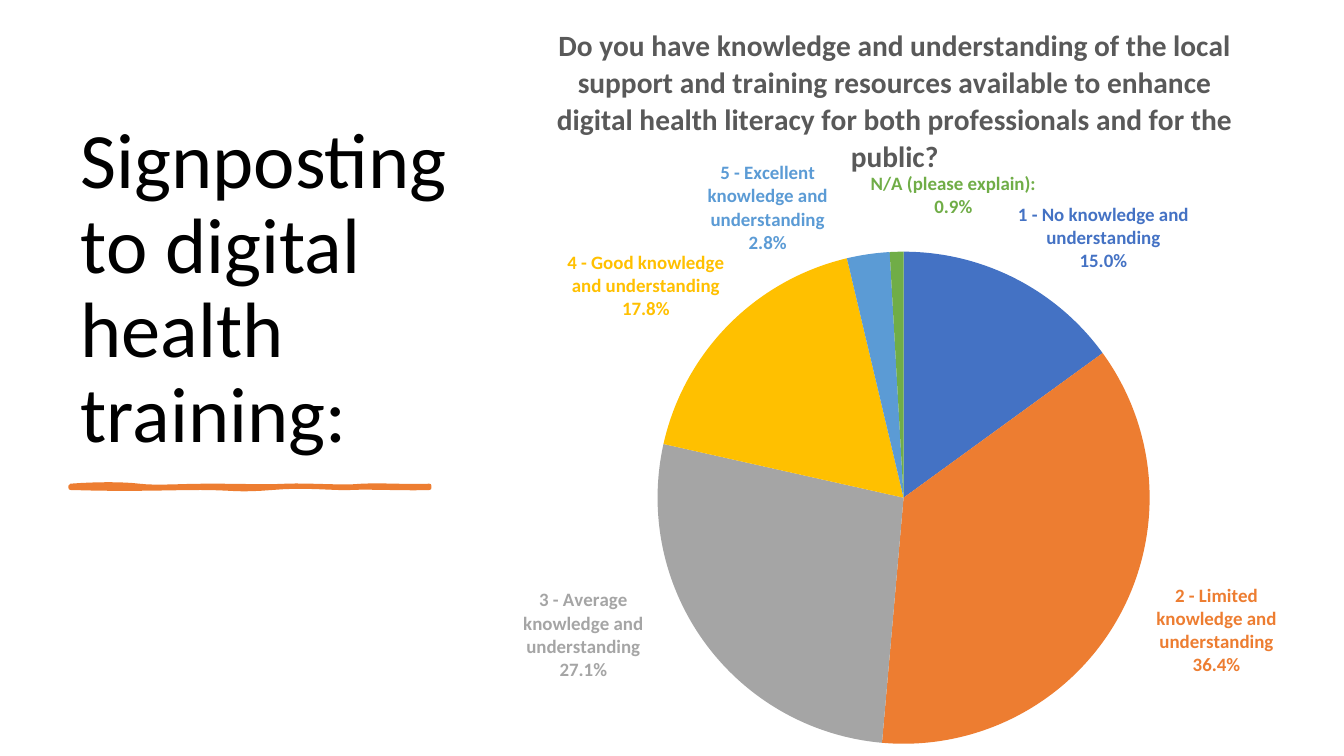
from lxml import etree
from pptx import Presentation
from pptx.chart.data import CategoryChartData
from pptx.dml.color import RGBColor
from pptx.enum.chart import XL_CHART_TYPE, XL_LABEL_POSITION
from pptx.enum.text import MSO_ANCHOR, MSO_AUTO_SIZE, PP_ALIGN
from pptx.oxml.ns import qn
from pptx.util import Pt

PIE = XL_CHART_TYPE.PIE
OUTSIDE_END = XL_LABEL_POSITION.OUTSIDE_END
ORANGE = "ED7D31"
QUESTION = ("Do you have knowledge and understanding of the local support and "
            "training resources available to enhance digital health literacy "
            "for both professionals and for the public?")

# Answer, share, colour, label shift as a fraction of the chart
ANSWERS = [
    ("1 - No knowledge and understanding", 0.15, "4472C4", None),
    ("2 - Limited knowledge and understanding", 0.364, ORANGE, (0.039, -0.049)),
    ("3 - Average knowledge and understanding", 0.271, "A5A5A5", (-0.066, -0.076)),
    ("4 - Good knowledge and understanding", 0.178, "FFC000", None),
    ("5 - Excellent knowledge and understanding", 0.028, "5B9BD5", (-0.046, 0.008)),
    ("N/A (please explain):", 0.009, "70AD47", (0.066, -0.036)),
]

# Underline: start point, then two control points and an end point per curve
UNDERLINE_START = (50.4, 347)
UNDERLINE_CURVES = [
    ((69.8, 345.6), (87.1, 345.6), (99.4, 347)),
    ((111.6, 348.5), (127.4, 347), (150.5, 347)),
    ((173.5, 347), (187.2, 347.8), (204.5, 347)),
    ((221.8, 346.3), (244.1, 348.5), (258.5, 347)),
    ((272.9, 346.3), (296.6, 347.8), (306.7, 347)),
    ((306.7, 347.8), (306.7, 348.5), (306.7, 348.5)),
    ((293.8, 349.2), (262.1, 347.8), (250.6, 348.5)),
    ((239, 349.2), (218.9, 346.3), (194.4, 348.5)),
    ((169.2, 350.6), (166.3, 348.5), (143.3, 348.5)),
    ((119.5, 348.5), (95, 349.9), (50.4, 348.5)),
]
CURVE_STEPS = 8


def set_format(target, values):
    for name, value in values.items():
        if name == "color":
            target.color.rgb = RGBColor.from_string(value)
        else:
            setattr(target, name, value)


def set_layout(parent, index, values):
    for old_layout in parent.findall(qn("c:layout")):
        parent.remove(old_layout)
    layout = etree.Element(qn("c:layout"))
    manual = etree.SubElement(layout, qn("c:manualLayout"))
    for name, value in values.items():
        etree.SubElement(manual, qn("c:" + name)).set("val", str(value))
    parent.insert(index, layout)


presentation = Presentation()
presentation.slide_width = Pt(960)
presentation.slide_height = Pt(540)
slide = presentation.slides.add_slide(presentation.slide_layouts[5])

# Slide title
title = slide.shapes.title
set_format(title, {"left": Pt(50.4), "top": Pt(50.4),
                   "width": Pt(281.5), "height": Pt(281.5)})
set_format(title.text_frame, {
    "text": "Signposting to digital health training:", "word_wrap": True,
    "auto_size": MSO_AUTO_SIZE.NONE, "vertical_anchor": MSO_ANCHOR.BOTTOM})
paragraph = title.text_frame.paragraphs[0]
set_format(paragraph, {"alignment": PP_ALIGN.LEFT, "line_spacing": 0.9})
set_format(paragraph.runs[0].font,
           {"name": "Calibri", "size": Pt(56), "color": "000000"})

# Hand-drawn underline, its points given in EMU to keep the curves smooth
points = []
start = UNDERLINE_START
for first, second, end in UNDERLINE_CURVES:
    for step in range(1, CURVE_STEPS + 1):
        t = step / CURVE_STEPS
        points.append([
            Pt((1 - t) ** 3 * a + 3 * (1 - t) ** 2 * t * b + 3 * (1 - t) * t ** 2 * c + t ** 3 * d)
            for a, b, c, d in zip(start, first, second, end)])
    start = end
builder = slide.shapes.build_freeform(*[Pt(value) for value in UNDERLINE_START])
builder.add_line_segments(points, close=True)
underline = builder.convert_to_shape()
underline.shadow.inherit = False
underline.fill.solid()
underline.fill.fore_color.rgb = RGBColor.from_string(ORANGE)
set_format(underline.line, {"color": ORANGE, "width": Pt(3)})
etree.SubElement(underline.line._get_or_add_ln(), qn("a:round"))

# Pie chart
chart_data = CategoryChartData(number_format="0.0%")
chart_data.categories = [answer[0] for answer in ANSWERS]
chart_data.add_series("Series 1", [answer[1] for answer in ANSWERS])
chart = slide.shapes.add_chart(
    PIE, Pt(331.2), Pt(0), Pt(615.6), Pt(540), chart_data).chart
chart.has_legend = False
set_format(chart.font, {"name": "Calibri", "size": Pt(10), "color": "000000"})
plot = chart.plots[0]
plot.vary_by_categories = True
set_layout(chart._chartSpace.chart.plotArea, 0, {
    "layoutTarget": "inner", "xMode": "edge", "yMode": "edge",
    "x": 0.225, "y": 0.333, "w": 0.571, "h": 0.651})

# Chart title
chart.has_title = True
chart.chart_title.text_frame.text = QUESTION
set_format(chart.chart_title.text_frame.paragraphs[0].runs[0].font, {
    "name": "Calibri", "size": Pt(21), "bold": True, "color": "595959"})
set_layout(chart.chart_title._element, 1,
           {"xMode": "edge", "yMode": "edge", "x": 0.102, "y": 0.026})

# Slices and their labels
series = plot.series[0]
for index, (answer, share, color, shift) in enumerate(ANSWERS):
    point = series.points[index]
    point.format.fill.solid()
    point.format.fill.fore_color.rgb = RGBColor.from_string(color)
    point.format.line.fill.background()
    label = point.data_label
    set_format(label.font, {"name": "Calibri", "size": Pt(13.5),
                            "bold": True, "color": color})
    label.position = OUTSIDE_END
    label_element = series._element.findall(".//" + qn("c:dLbl"))[index]
    label_element.find(qn("c:showCatName")).set("val", "1")
    etree.SubElement(label_element, qn("c:separator")).text = "\n"
    if shift:
        set_layout(label_element, 1, dict(zip("xy", shift)))
for leader_lines in series._element.iter(qn("c:showLeaderLines")):
    leader_lines.set("val", "0")
set_format(series.data_labels, {
    "number_format": "0.0%", "number_format_is_linked": False,
    "show_value": True, "show_category_name": True, "position": OUTSIDE_END})

presentation.save("out.pptx")
